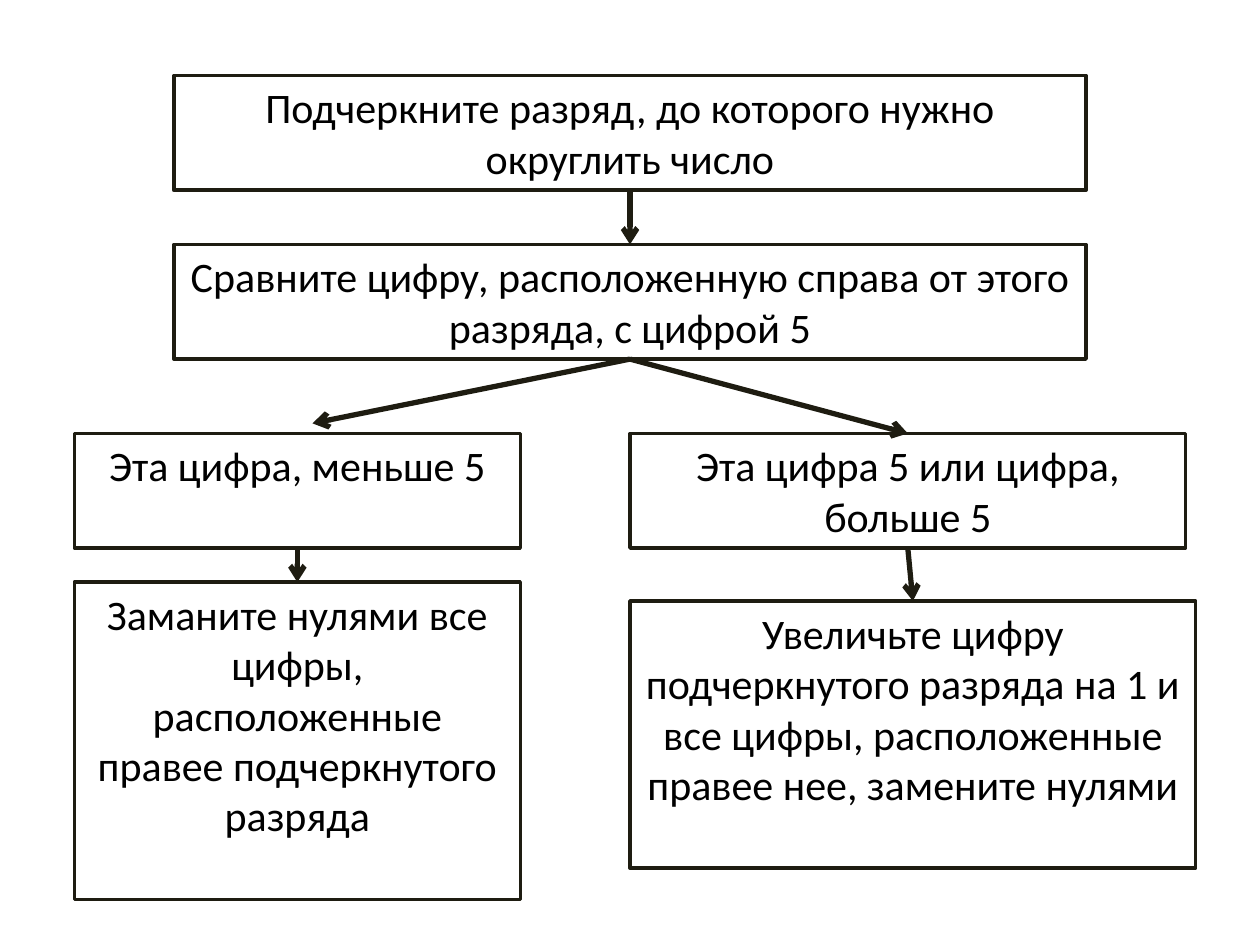
from lxml import etree
from pptx import Presentation
from pptx import util as u
from pptx.dml.color import RGBColor
from pptx.enum import shapes, text
from pptx.oxml.ns import qn

INK, PAPER, BLACK = "1E1C11", "FFFFFF", "000000"
FONT = {"name": "Calibri", "size": u.Pt(24)}
FRAME = {"word_wrap": True, "auto_size": text.MSO_AUTO_SIZE.NONE,
         "vertical_anchor": text.MSO_ANCHOR.TOP}
TOP, BOTTOM = 0, 2

# Steps: name -> (left, top, width, height), wording
STEPS = {
    "underline": ((1.38, 0.6, 7.24, 0.91),
                  "Подчеркните разряд, до которого нужно округлить число"),
    "compare": ((1.38, 1.94, 7.24, 0.91),
                "Сравните цифру, расположенную справа от этого разряда, с цифрой 5"),
    "less": ((0.59, 3.44, 3.54, 0.91), "Эта цифра, меньше 5"),
    "more": ((5, 3.44, 4.41, 0.91), "Эта цифра 5 или цифра, больше 5"),
    "zeros": ((0.59, 4.62, 3.54, 2.52),
              "Заманите нулями все цифры, расположенные правее подчеркнутого разряда"),
    "increase": ((5, 4.77, 4.49, 2.12),
                 "Увеличьте цифру подчеркнутого разряда на 1 и все цифры, "
                 "расположенные правее нее, замените нулями"),
}

# Arrows: from step, to step or to a free point
ARROWS = [("underline", "compare"), ("compare", (2.48, 3.36)), ("compare", "more"),
          ("less", "zeros"), ("more", "increase")]


def color(value):
    return RGBColor.from_string(value)


def apply(target, values):
    for name, value in values.items():
        setattr(target, name, value)


def add_step(page, place, wording):
    box = page.shapes.add_shape(shapes.MSO_SHAPE.RECTANGLE, *map(u.Inches, place))
    box.shadow.inherit = False
    box.fill.solid()
    box.fill.fore_color.rgb = color(PAPER)
    box.line.color.rgb = color(INK)
    box.line.width = u.Pt(2)
    apply(box.text_frame, FRAME)
    para = box.text_frame.paragraphs[0]
    para.alignment = text.PP_ALIGN.CENTER
    span = para.add_run()
    span.text = wording
    apply(span.font, FONT)
    span.font.color.rgb = color(BLACK)
    return box


def add_arrow(page, boxes, start, end):
    free_end = (0, 0) if end in boxes else end
    arrow = page.shapes.add_connector(shapes.MSO_CONNECTOR.STRAIGHT, 0, 0,
                                      *map(u.Inches, free_end))
    arrow.begin_connect(boxes[start], BOTTOM)
    if end in boxes:
        arrow.end_connect(boxes[end], TOP)
    arrow.line.color.rgb = color(INK)
    arrow.line.width = u.Pt(3)
    # Arrowhead, and no shadow
    etree.SubElement(arrow.line._get_or_add_ln(), qn("a:tailEnd"), type="arrow")
    etree.SubElement(arrow._element.spPr, qn("a:effectLst"))


def main():
    deck = Presentation()
    deck.slide_width, deck.slide_height = u.Inches(10), u.Inches(7.5)
    page = deck.slides.add_slide(deck.slide_layouts[6])
    boxes = {name: add_step(page, *step) for name, step in STEPS.items()}
    for start, end in ARROWS:
        add_arrow(page, boxes, start, end)
    deck.save("out.pptx")


if __name__ == "__main__":
    main()
